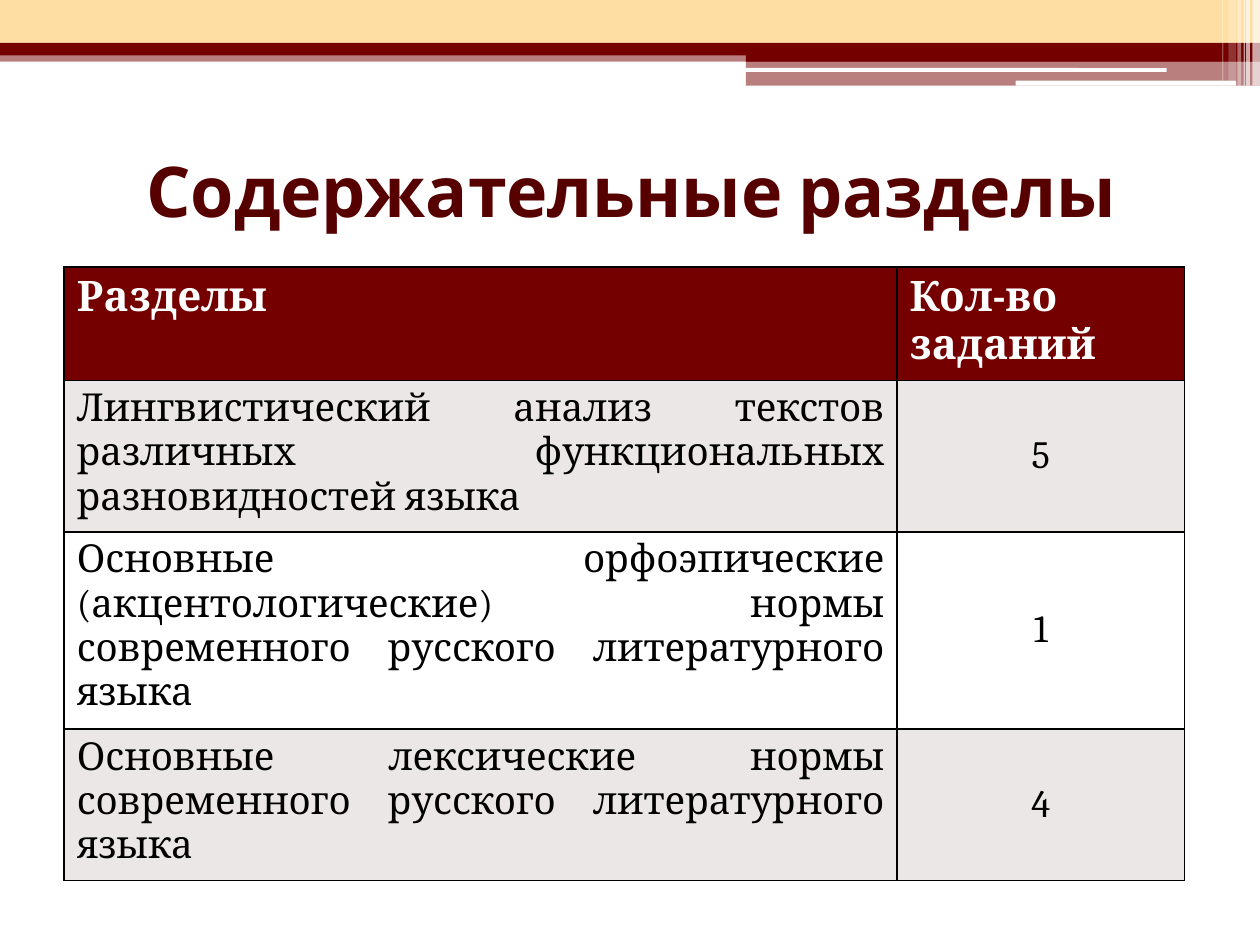
from typing import NamedTuple

from lxml.etree import SubElement
from pptx import Presentation
from pptx.dml.color import RGBColor
from pptx.enum.shapes import MSO_SHAPE
from pptx.enum.text import MSO_ANCHOR, PP_ALIGN
from pptx.oxml import parse_xml
from pptx.oxml.ns import nsdecls, qn
from pptx.util import Inches, Pt

INK = {
    "wine": "740000",
    "dark": "570000",
    "sand": "FFDEA4",
    "band": "EBE7E7",
    "white": "FFFFFF",
    "black": "000000",
}


class Bar(NamedTuple):
    left: float
    top: float
    width: float
    height: float
    ink: str
    alpha: int = 100
    kind: MSO_SHAPE = MSO_SHAPE.RECTANGLE


class Row(NamedTuple):
    topic: str
    count: str
    height: float


ROUND = MSO_SHAPE.ROUNDED_RECTANGLE
BARS = [
    Bar(0, 0.4, 10, 0.09, "wine", 50),
    Bar(0, 0, 10, 0.34, "sand"),
    Bar(0, 0.34, 10, 0.1, "wine"),
    Bar(5.92, 0.39, 4.08, 0.1, "wine"),
    Bar(5.92, 0.48, 4.08, 0.2, "wine", 50),
    Bar(5.91, 0.54, 3.35, 0.03, "white", kind=ROUND),
    Bar(8.06, 0.64, 1.75, 0.04, "white", kind=ROUND),
    Bar(9.94, 0, 0.06, 0.68, "white", 65),
    Bar(9.89, 0, 0.03, 0.68, "white", 65),
    Bar(9.87, 0, 0.01, 0.68, "white", 60),
    Bar(9.82, 0, 0.03, 0.68, "white", 40),
    Bar(9.75, 0, 0.06, 0.64, "white", 20),
    Bar(9.7, 0, 0.01, 0.64, "white", 30),
]
ROWS = [
    Row("Разделы", "Кол-во\nзаданий", 0.87),
    Row("Лингвистический анализ текстов различных функциональных "
        "разновидностей языка", "5", 1.15),
    Row("Основные орфоэпические (акцентологические) нормы современного "
        "русского литературного языка", "1", 1.51),
    Row("Основные лексические нормы современного русского "
        "литературного языка", "4", 1.15),
]
COLS = [6.61, 2.28]


def tint(ink: str) -> RGBColor:
    return RGBColor.from_string(INK[ink])


def style(para, face: str, size: int, ink: str, bold: bool, align) -> None:
    para.alignment = align
    font = para.font
    font.name, font.size, font.bold = face, Pt(size), bold
    font.color.rgb = tint(ink)


def draw_bar(slide, bar: Bar) -> None:
    shape = slide.shapes.add_shape(
        bar.kind, Inches(bar.left), Inches(bar.top),
        Inches(bar.width), Inches(bar.height))
    shape.shadow.inherit = False
    shape.line.fill.background()
    shape.fill.solid()
    shape.fill.fore_color.rgb = tint(bar.ink)
    if bar.alpha < 100:
        color = shape.element.spPr.find(qn("a:solidFill"))[0]
        SubElement(color, qn("a:alpha"), val=str(bar.alpha * 1000))


def draw_title(slide, text: str) -> None:
    box = slide.shapes.add_textbox(
        Inches(0.51), Inches(0.92), Inches(9), Inches(1.17))
    frame = box.text_frame
    frame.word_wrap = True
    frame.vertical_anchor = MSO_ANCHOR.MIDDLE
    frame.text = text
    style(frame.paragraphs[0], "Cabin", 40, "dark", True, PP_ALIGN.CENTER)


def frame_cell(cell) -> None:
    props = cell._tc.get_or_add_tcPr()
    for spot, side in enumerate("LRTB"):
        props.insert(spot, parse_xml(
            f'<a:ln{side} {nsdecls("a")} w="12700"><a:solidFill>'
            f'<a:srgbClr val="{INK["black"]}"/></a:solidFill></a:ln{side}>'))


def fill_cell(cell, text: str, row: int, col: int) -> None:
    head = row == 0
    cell.text = text
    cell.fill.solid()
    cell.fill.fore_color.rgb = tint(
        "wine" if head else "band" if row % 2 else "white")
    frame_cell(cell)
    if col and not head:
        cell.vertical_anchor = MSO_ANCHOR.MIDDLE
    align = (PP_ALIGN.LEFT if head
             else PP_ALIGN.CENTER if col else PP_ALIGN.JUSTIFY)
    for para in cell.text_frame.paragraphs:
        style(para, "Cambria", 24 if head else 22,
              "white" if head else "black", head, align)


def draw_table(slide, rows: list[Row]) -> None:
    table = slide.shapes.add_table(
        len(rows), len(COLS), Inches(0.51), Inches(2.12),
        Inches(sum(COLS)), Inches(sum(row.height for row in rows))).table
    for col, width in enumerate(COLS):
        table.columns[col].width = Inches(width)
    for index, row in enumerate(rows):
        table.rows[index].height = Inches(row.height)
        for col, text in enumerate((row.topic, row.count)):
            fill_cell(table.cell(index, col), text, index, col)


def main() -> None:
    deck = Presentation()
    deck.slide_width, deck.slide_height = Inches(10), Inches(7.5)
    slide = deck.slides.add_slide(deck.slide_layouts[6])
    for bar in BARS:
        draw_bar(slide, bar)
    draw_title(slide, "Содержательные разделы")
    draw_table(slide, ROWS)
    deck.save("out.pptx")


if __name__ == "__main__":
    main()
